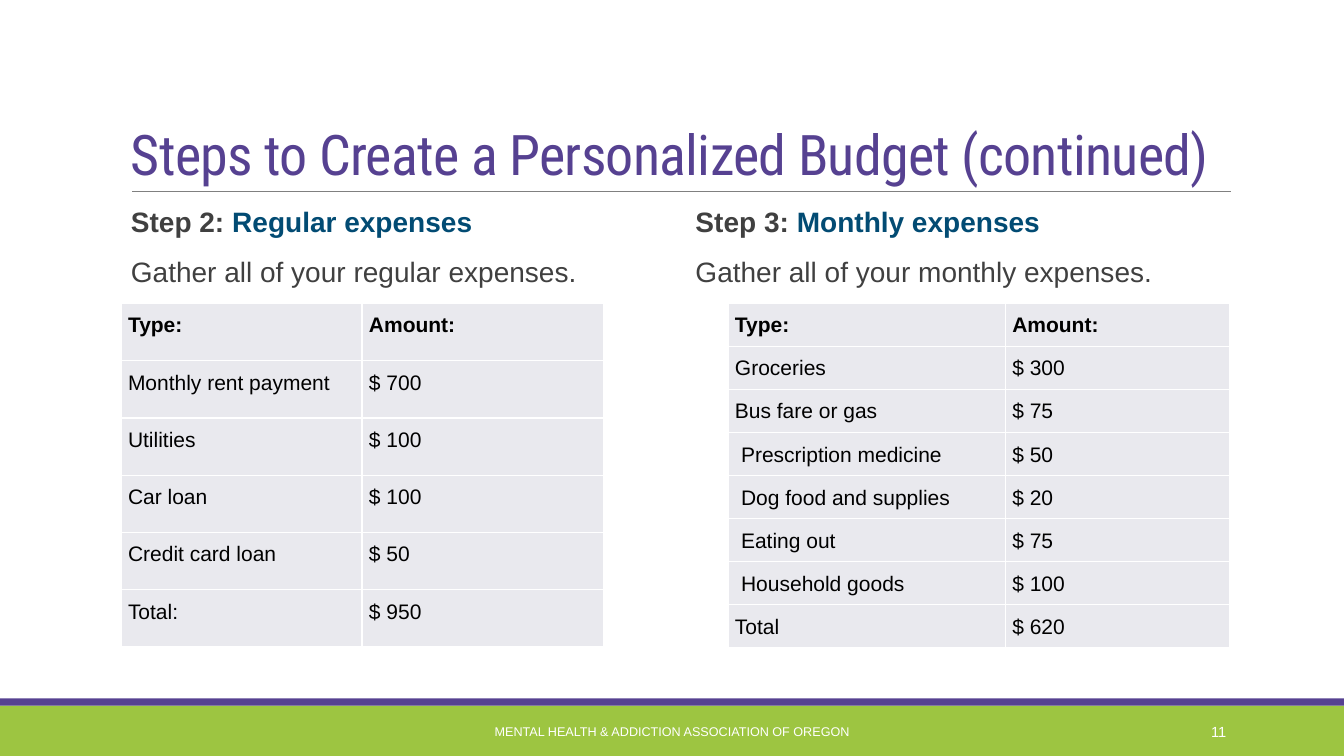
from lxml import etree
from pptx import Presentation
from pptx import util as u
from pptx.dml.color import RGBColor
from pptx.enum import shapes, text
from pptx.oxml.ns import qn

PURPLE, GREEN, WHITE = "564191", "9DC541", "FFFFFF"
GRAY, BLUE, BLACK, CELL = "404040", "024B73", "000000", "E9E9EE"
BODY_FONT = "Arial"

REGULAR = [
    ("Type:", "Amount:"),
    ("Monthly rent payment", "$ 700"),
    ("Utilities", "$ 100"),
    ("Car loan", "$ 100"),
    ("Credit card loan", "$ 50"),
    ("Total:", "$ 950"),
]
MONTHLY = [
    ("Type:", "Amount:"),
    ("Groceries", "$ 300"),
    ("Bus fare or gas", "$ 75"),
    ("Prescription medicine", "$ 50"),
    ("Dog food and supplies", "$ 20"),
    ("Eating out", "$ 75"),
    ("Household goods", "$ 100"),
    ("Total", "$ 620"),
]
INDENTED_ROWS = range(3, 7)


def color(value):
    return RGBColor.from_string(value)


def set_font(target, size, value, name=BODY_FONT, bold=False):
    font = target.font
    font.name, font.size, font.bold = name, u.Pt(size), bold
    font.color.rgb = color(value)


def add_band(page, top, height, fill):
    band = page.shapes.add_shape(
        shapes.MSO_SHAPE.RECTANGLE, 0, u.Inches(top), u.Inches(13.33), u.Inches(height))
    band.shadow.inherit = False
    band.fill.solid()
    band.fill.fore_color.rgb = color(fill)
    band.line.fill.background()


def add_rule(page, left, right, top):
    rule = page.shapes.add_connector(
        shapes.MSO_CONNECTOR.STRAIGHT,
        u.Inches(left), u.Inches(top), u.Inches(right), u.Inches(top))
    rule.line.color.rgb = color("808080")
    rule.line.width = u.Pt(0.5)
    etree.SubElement(rule._element.spPr, qn("a:effectLst"))


def add_box(page, left, top, width, height, anchor):
    box = page.shapes.add_textbox(
        u.Inches(left), u.Inches(top), u.Inches(width), u.Inches(height))
    frame = box.text_frame
    frame.word_wrap = True
    frame.vertical_anchor = anchor
    return frame


def add_title(page, words):
    frame = add_box(page, 1.2, 0.31, 11, 1.59, text.MSO_ANCHOR.BOTTOM)
    para = frame.paragraphs[0]
    para.line_spacing = 0.85
    span = para.add_run()
    span.text = words
    set_font(span, 40, PURPLE, "Roboto Condensed")
    span.font._element.set("spc", "-50")


def add_step(page, left, label, topic, detail):
    frame = add_box(page, left, 2.02, 5.4, 4.4, text.MSO_ANCHOR.TOP)
    frame.margin_left, frame.margin_right = u.Inches(0.1), 0
    heading, body = frame.paragraphs[0], frame.add_paragraph()
    for words, value in ((label, GRAY), (topic, BLUE)):
        span = heading.add_run()
        span.text = words
        set_font(span, 20, value, bold=True)
    body.text = detail
    set_font(body, 20, GRAY)
    body.space_before = u.Pt(12)
    for para in (heading, body):
        para.line_spacing = 0.9
        para.space_after = u.Pt(2)


def add_borders(cell):
    # Borders come before the fill in the cell properties
    props = cell._tc.get_or_add_tcPr()
    for position, side in enumerate(("lnL", "lnR", "lnT", "lnB")):
        line = etree.Element(qn(f"a:{side}"), w=str(u.Pt(1)))
        fill = etree.SubElement(line, qn("a:solidFill"))
        etree.SubElement(fill, qn("a:srgbClr"), val=WHITE)
        props.insert(position, line)


def add_expenses(page, left, widths, rows, indented=()):
    top, height = 3.01, 3.41
    table = page.shapes.add_table(
        len(rows), len(widths), u.Inches(left), u.Inches(top),
        u.Inches(sum(widths)), u.Inches(height)).table
    for column, width in zip(table.columns, widths):
        column.width = u.Inches(width)
    for r, values in enumerate(rows):
        table.rows[r].height = u.Inches(height / len(rows))
        for c, value in enumerate(values):
            cell = table.cell(r, c)
            cell.fill.solid()
            cell.fill.fore_color.rgb = color(CELL)
            add_borders(cell)
            cell.margin_right = cell.margin_top = cell.margin_bottom = u.Inches(0.07)
            cell.margin_left = u.Inches(0.13 if c == 0 and r in indented else 0.07)
            para = cell.text_frame.paragraphs[0]
            para.text = value
            para.line_spacing = 1.15
            set_font(para, 15, BLACK, bold=r == 0)


def add_footer(page, left, width, words, size, align):
    frame = add_box(page, left, 7.06, width, 0.4, text.MSO_ANCHOR.MIDDLE)
    para = frame.paragraphs[0]
    para.text = words
    para.alignment = align
    set_font(para, size, WHITE)


def main():
    deck = Presentation()
    deck.slide_width, deck.slide_height = u.Inches(13.33), u.Inches(7.5)
    page = deck.slides.add_slide(deck.slide_layouts[6])

    # Bottom bands and title
    add_band(page, 7, 0.5, GREEN)
    add_band(page, 6.93, 0.07, PURPLE)
    add_rule(page, 1.31, 12.21, 1.9)
    add_title(page, "Steps to Create a Personalized Budget (continued)")

    # Two steps, each with its table
    add_step(page, 1.2, "Step 2: ", "Regular expenses",
             "Gather all of your regular expenses.")
    add_step(page, 6.8, "Step 3: ", "Monthly expenses",
             "Gather all of your monthly expenses.")
    add_expenses(page, 1.2, (2.39, 2.4), REGULAR)
    add_expenses(page, 7.22, (2.75, 2.23), MONTHLY, INDENTED_ROWS)

    # Footer and page number
    add_footer(page, 4.03, 5.27, "MENTAL HEALTH & ADDICTION ASSOCIATION OF OREGON",
               9, text.PP_ALIGN.CENTER)
    add_footer(page, 10.83, 1.43, "11", 10.5, text.PP_ALIGN.RIGHT)

    deck.save("out.pptx")


if __name__ == "__main__":
    main()
